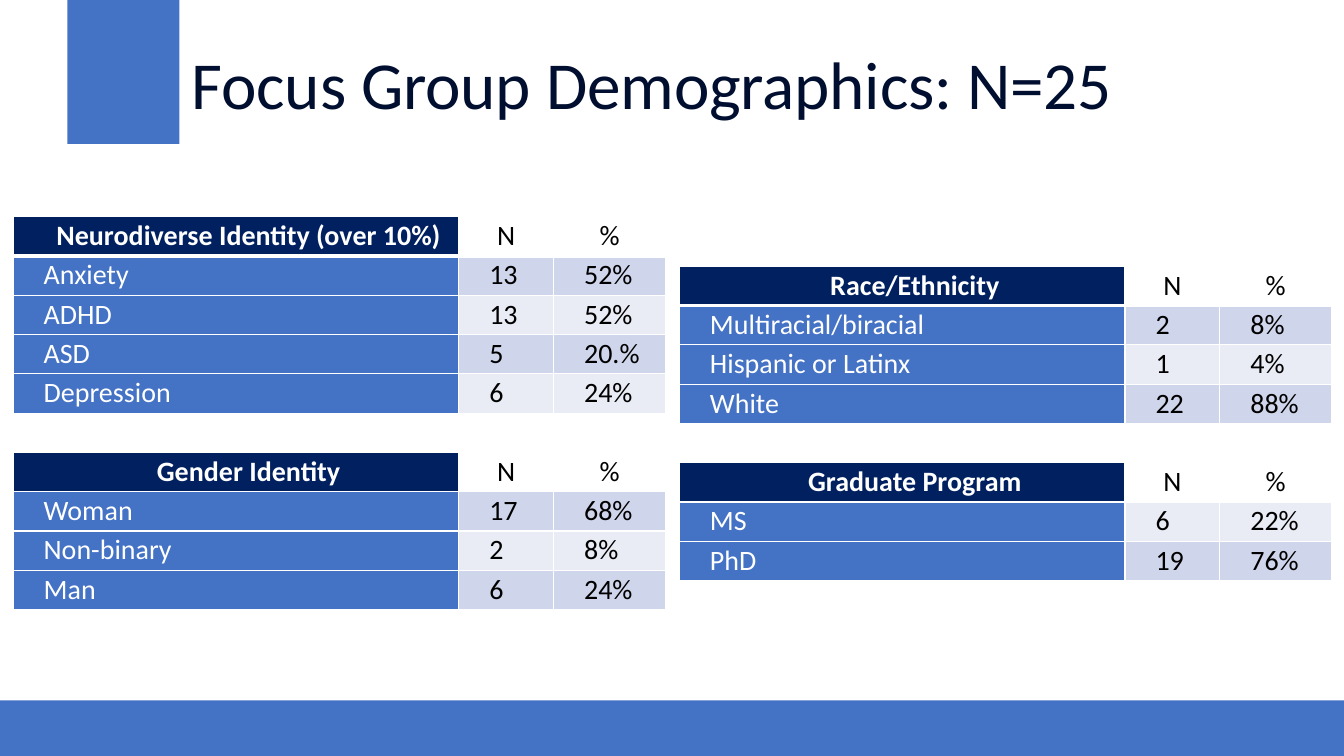
import pptx
import pptx.dml.color
import pptx.enum.shapes
import pptx.enum.text
import pptx.oxml
import pptx.oxml.ns
import pptx.util

Cm = pptx.util.Cm
Pt = pptx.util.Pt
RGBColor = pptx.dml.color.RGBColor
Align = pptx.enum.text.PP_ALIGN
Anchor = pptx.enum.text.MSO_ANCHOR

BLUE = RGBColor(0x44, 0x72, 0xC4)
NAVY = RGBColor(0x00, 0x20, 0x60)
TITLE_INK = RGBColor(0x00, 0x0E, 0x2F)
DARK_BAND = RGBColor(0xCF, 0xD5, 0xEA)
LIGHT_BAND = RGBColor(0xE9, 0xEB, 0xF5)
WHITE = RGBColor(0xFF, 0xFF, 0xFF)
BLACK = RGBColor(0x00, 0x00, 0x00)

FONT = "Calibri"
PAGE_WIDTH, PAGE_HEIGHT = 33.87, 19.05
COLUMN_WIDTHS = (11.23, 2.39, 2.82)
ROW_HEIGHT = 0.99

IDENTITY_GROUPS = [
    ("Neurodiverse Identity (over 10%)", [
        ("Anxiety", "13", "52%"),
        ("ADHD", "13", "52%"),
        ("ASD", "5", "20.%"),
        ("Depression", "6", "24%"),
    ]),
    ("Gender Identity", [
        ("Woman", "17", "68%"),
        ("Non-binary", "2", "8%"),
        ("Man", "6", "24%"),
    ]),
]
BACKGROUND_GROUPS = [
    ("Race/Ethnicity", [
        ("Multiracial/biracial", "2", "8%"),
        ("Hispanic or Latinx", "1", "4%"),
        ("White", "22", "88%"),
    ]),
    ("Graduate Program", [
        ("MS", "6", "22%"),
        ("PhD", "19", "76%"),
    ]),
]


def write_text(frame, text, size=20, color=BLACK, bold=False, align=Align.LEFT,
               line_spacing=None, margin=0, first_line=0, tracking=None):
    """Write one formatted paragraph; margin and first_line are in cm, tracking in points."""
    para = frame.paragraphs[0]
    para.alignment = align
    para.line_spacing = line_spacing
    properties = para._p.get_or_add_pPr()
    properties.set("marL", str(Cm(margin)))
    properties.set("indent", str(Cm(first_line)))
    span = para.add_run()
    span.text = text
    span.font.name = FONT
    span.font.size = Pt(size)
    span.font.bold = bold
    span.font.color.rgb = color
    if tracking is not None:
        span._r.get_or_add_rPr().set("spc", str(round(tracking * 100)))


def add_block(page, left, top, width, height):
    block = page.shapes.add_shape(pptx.enum.shapes.MSO_SHAPE.RECTANGLE,
                                  Cm(left), Cm(top), Cm(width), Cm(height))
    block.shadow.inherit = False
    block.fill.solid()
    block.fill.fore_color.rgb = BLUE
    block.line.fill.background()


def add_title(page, text, left, top, width, height):
    title = page.shapes.title
    title.left, title.top, title.width, title.height = map(Cm, (left, top, width, height))
    frame = title.text_frame
    frame.margin_left = frame.margin_right = frame.margin_top = frame.margin_bottom = 0
    frame.vertical_anchor = Anchor.TOP
    frame.auto_size = pptx.enum.text.MSO_AUTO_SIZE.SHAPE_TO_FIT_TEXT
    write_text(frame, text, size=48, color=TITLE_INK, margin=0.03, tracking=-0.1)


def style_cell(cell, fill, top=1, bottom=1):
    """Set margins, white borders (top and bottom widths in points) and fill."""
    cell.margin_left = cell.margin_right = Cm(0.13)
    cell.margin_top = cell.margin_bottom = 0
    cell.vertical_anchor = Anchor.MIDDLE
    properties = cell._tc.get_or_add_tcPr()
    for side, width in (("L", 1), ("R", 1), ("T", top), ("B", bottom)):
        properties.append(pptx.oxml.parse_xml(
            f'<a:ln{side} {pptx.oxml.ns.nsdecls("a")} w="{Pt(width)}"><a:solidFill>'
            f'<a:srgbClr val="{WHITE}"/></a:solidFill></a:ln{side}>'))
    cell.fill.solid()
    cell.fill.fore_color.rgb = fill


def add_group_table(page, groups, left, top):
    """Stack the groups in one table, each with a heading row, an empty row between them."""
    rows = []
    for heading, records in groups:
        if rows:
            rows.append(("gap", ("", "", "")))
        rows.append(("heading", (heading, "N", "%")))
        rows.extend(("record", record) for record in records)

    frame = page.shapes.add_table(len(rows), len(COLUMN_WIDTHS), Cm(left), Cm(top),
                                  Cm(sum(COLUMN_WIDTHS)), Cm(ROW_HEIGHT * len(rows)))
    table = frame.table
    for column, width in zip(table.columns, COLUMN_WIDTHS):
        column.width = Cm(width)
    for row_index, (kind, values) in enumerate(rows):
        table.rows[row_index].height = Cm(ROW_HEIGHT)
        band = DARK_BAND if row_index % 2 else LIGHT_BAND
        label_fill, value_fill = {"heading": (NAVY, WHITE), "record": (BLUE, band),
                                  "gap": (WHITE, WHITE)}[kind]
        for column_index, text in enumerate(values):
            is_label = column_index == 0
            is_heading = kind == "heading"
            cell = table.cell(row_index, column_index)
            style_cell(cell, label_fill if is_label else value_fill,
                       top=3 if row_index == 1 else 1,
                       bottom=3 if row_index == 0 else 1)
            if text:
                write_text(cell.text_frame, text,
                           color=WHITE if is_label else BLACK,
                           bold=is_label and is_heading,
                           align=Align.CENTER if is_heading else Align.LEFT,
                           line_spacing=0.9,
                           first_line=0 if is_heading and not is_label else 0.64)


def add_demographics_page(deck):
    page = deck.slides.add_slide(deck.slide_layouts[5])
    add_block(page, 0, 17.65, PAGE_WIDTH, PAGE_HEIGHT - 17.65)
    add_title(page, "Focus Group Demographics: N=25", 4.8, 1.07, 27.38, 2.06)
    add_block(page, 1.7, 0, 2.82, 3.63)
    add_group_table(page, IDENTITY_GROUPS, 0.33, 5.46)
    add_group_table(page, BACKGROUND_GROUPS, 17.12, 6.71)


def main():
    deck = pptx.Presentation()
    deck.slide_width = Cm(PAGE_WIDTH)
    deck.slide_height = Cm(PAGE_HEIGHT)
    add_demographics_page(deck)
    deck.save("out.pptx")


if __name__ == "__main__":
    main()
